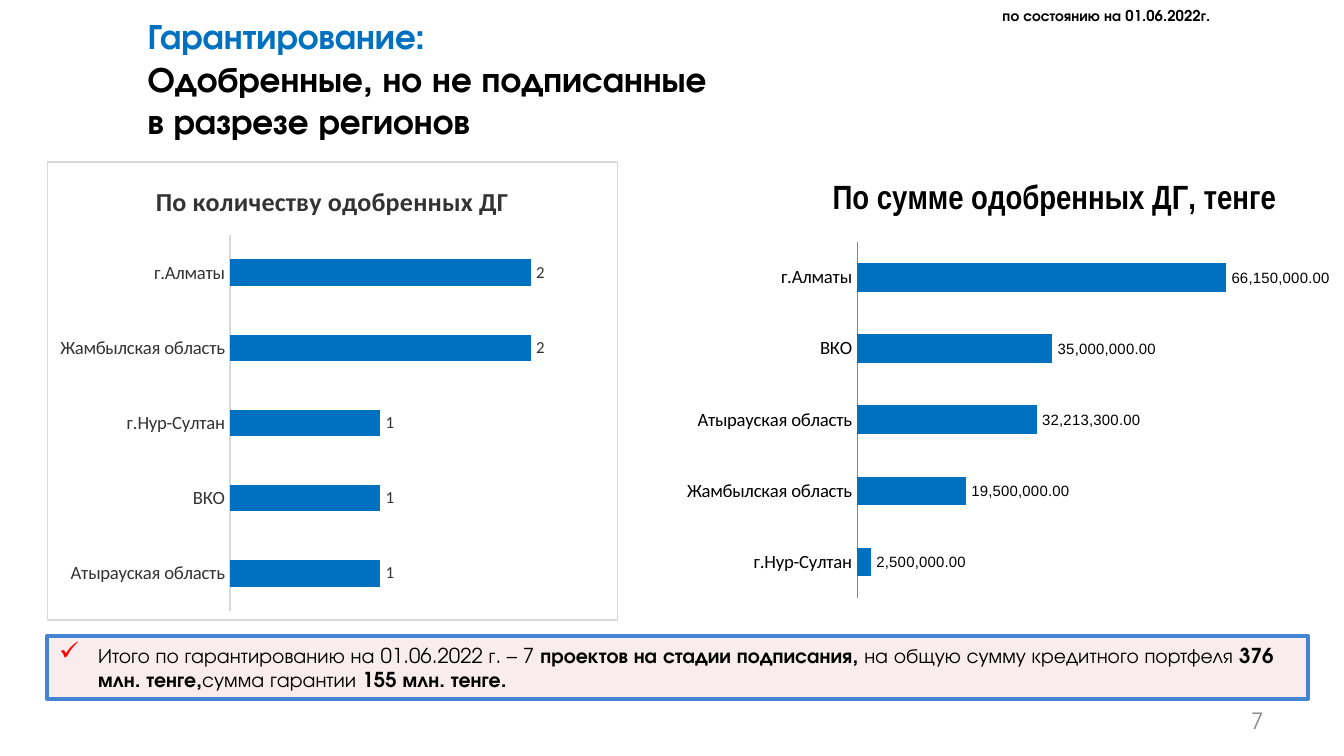
"""Build the slide on approved but unsigned guarantees by region."""
from lxml import etree
from pptx import Presentation
from pptx import util as u
from pptx.chart.data import CategoryChartData
from pptx.dml.color import RGBColor
from pptx.enum import chart as ch, shapes, text
from pptx.oxml import parse_xml
from pptx.oxml.ns import nsdecls, qn

Pt = u.Pt
FACE = "TeX Gyre Adventor"
HUES = {"blue": "0070C0", "black": "000000", "dark": "333333", "grey": "8C8C8C",
        "rule": "D9D9D9", "axis": "868686", "pink": "F2DCDB", "edge": "4584D3",
        "red": "FF0000", "white": "FFFFFF"}


def style(font, size, hue, bold=False, face=FACE):
    font.size, font.bold, font.name = Pt(size), bold, face
    font.color.rgb = RGBColor.from_string(HUES[hue])


def place(host, **vals):
    lay = host.find(qn("c:layout"))
    if lay is None:
        lay = etree.Element(qn("c:layout"))
        host.insert(0, lay)
    man = etree.SubElement(lay, qn("c:manualLayout"))
    for tag, val in vals.items():
        etree.SubElement(man, qn("c:" + tag)).set("val", str(val))


prs = Presentation()
prs.slide_width, prs.slide_height = Pt(720), Pt(405)
slide = prs.slides.add_slide(prs.slide_layouts[6])

labels = [
    ((72, 4, 430, 76), text.MSO_ANCHOR.TOP, text.PP_ALIGN.LEFT, 19, True,
     [("Гарантирование:", "blue"), ("Одобренные, но не подписанные", "black"),
      ("в разрезе регионов", "black")]),
    ((530, 0, 164, 17), text.MSO_ANCHOR.TOP, text.PP_ALIGN.LEFT, 8, True,
     [("по состоянию на 01.06.2022г.", "black")]),
    ((516, 375, 168, 22), text.MSO_ANCHOR.MIDDLE, text.PP_ALIGN.RIGHT, 12, False,
     [("7", "grey")]),
]
for area, anchor, align, size, bold, lines in labels:
    frame = slide.shapes.add_textbox(*map(Pt, area)).text_frame
    frame.word_wrap, frame.vertical_anchor = True, anchor
    frame.text = "\n".join(line for line, hue in lines)
    for para, (line, hue) in zip(frame.paragraphs, lines):
        para.alignment = align
        style(para.runs[0].font, size, hue, bold)

note = slide.shapes.add_shape(shapes.MSO_SHAPE.RECTANGLE,
                              Pt(25.2), Pt(340.6), Pt(675.4), Pt(33.8))
note.shadow.inherit = False
note.fill.solid()
note.fill.fore_color.rgb = RGBColor.from_string(HUES["pink"])
tint = note.fill._xPr.find(qn("a:solidFill"))[0]
etree.SubElement(tint, qn("a:alpha")).set("val", "50000")
note.line.color.rgb = RGBColor.from_string(HUES["edge"])
note.line.width = Pt(2)
frame = note.text_frame
frame.word_wrap, frame.vertical_anchor = True, text.MSO_ANCHOR.MIDDLE
frame.margin_left = frame.margin_right = Pt(5.8)
frame.margin_top = frame.margin_bottom = Pt(2.9)
para = frame.paragraphs[0]
para.alignment, para.space_after = text.PP_ALIGN.LEFT, Pt(6)
props = para._p.get_or_add_pPr()
props.set("marL", str(Pt(21.6)))
props.set("indent", str(Pt(-20.9)))
for bit in (f'<a:buClr {nsdecls("a")}><a:srgbClr val="{HUES["red"]}"/></a:buClr>',
            f'<a:buSzPct {nsdecls("a")} val="125000"/>',
            f'<a:buChar {nsdecls("a")} char="✓"/>'):
    props.append(parse_xml(bit))
parts = ["Итого по гарантированию на 01.06.2022 г. – 7 ",
         "проектов на стадии подписания, ",
         "на общую сумму кредитного портфеля ",
         "376 млн. тенге,", "сумма гарантии ", "155 млн. тенге."]
for i, part in enumerate(parts):
    run = para.add_run()
    run.text = part
    style(run.font, 11, "black", i % 2 == 1)

plots = [
    dict(area=(25.2, 86.4, 306, 246.2), title="По количеству одобренных ДГ",
         head=(14, "dark", True, "Calibri"), ink="dark", axis="rule", gap=182, top=2.5,
         cats=["Атырауская область", "ВКО", "г.Нур-Султан", "Жамбылская область", "г.Алматы"],
         vals=[1, 1, 1, 2, 2], form="General", tag=(9, "dark", False, "Calibri"),
         inner=(0.32, 0.16, 0.66, 0.82), spot=None, frame=True),
    dict(area=(332, 86.4, 410.4, 254.2), title="По сумме одобренных ДГ, тенге",
         head=(18, "black", True, "Arial Narrow"), ink="black", axis="axis", gap=150, top=70000000,
         cats=["г.Нур-Султан", "Жамбылская область", "Атырауская область", "ВКО", "г.Алматы"],
         vals=[2500000, 19500000, 32213300, 35000000, 66150000], form="#,##0.00",
         tag=(8, "black", False, "Arial"),
         inner=(0.31, 0.17, 0.51, 0.75), spot=(0.27, 0.03), frame=False),
]
for plot in plots:
    data = CategoryChartData()
    data.categories = plot["cats"]
    data.add_series("Series 1", plot["vals"])
    chart = slide.shapes.add_chart(ch.XL_CHART_TYPE.BAR_CLUSTERED,
                                   *map(Pt, plot["area"]), data).chart
    style(chart.font, 10, "black", face="Calibri")
    chart.has_legend = False
    chart.has_title = True
    head = chart.chart_title.text_frame
    head.text = plot["title"]
    style(head.paragraphs[0].runs[0].font, *plot["head"])
    if plot["spot"]:
        x, y = plot["spot"]
        place(chart.chart_title._element, xMode="edge", yMode="edge", x=x, y=y)
    x, y, w, h = plot["inner"]
    space = chart._chartSpace
    place(space.find(".//" + qn("c:plotArea")), layoutTarget="inner",
          xMode="edge", yMode="edge", x=x, y=y, w=w, h=h)

    axis = chart.category_axis
    axis.major_tick_mark = ch.XL_TICK_MARK.NONE
    axis.has_major_gridlines = False
    style(axis.tick_labels.font, 10, plot["ink"], face="Calibri")
    axis.format.line.color.rgb = RGBColor.from_string(HUES[plot["axis"]])
    axis.format.line.width = Pt(0.75)
    scale = chart.value_axis
    scale.visible = scale.has_major_gridlines = False
    scale.minimum_scale, scale.maximum_scale = 0, plot["top"]

    bars = chart.plots[0]
    bars.gap_width, bars.vary_by_categories = plot["gap"], False
    fill = bars.series[0].format.fill
    fill.solid()
    fill.fore_color.rgb = RGBColor.from_string(HUES["blue"])
    bars.has_data_labels = True
    tags = bars.data_labels
    tags.show_value = True
    tags.number_format, tags.number_format_is_linked = plot["form"], False
    tags.position = ch.XL_LABEL_POSITION.OUTSIDE_END
    style(tags.font, *plot["tag"])

    if plot["frame"]:
        space.find(qn("c:txPr")).addprevious(parse_xml(
            f'<c:spPr {nsdecls("c", "a")}>'
            f'<a:solidFill><a:srgbClr val="{HUES["white"]}"/></a:solidFill>'
            f'<a:ln w="{Pt(0.75)}"><a:solidFill><a:srgbClr val="{HUES["rule"]}"/>'
            '</a:solidFill></a:ln></c:spPr>'))

prs.save("out.pptx")
